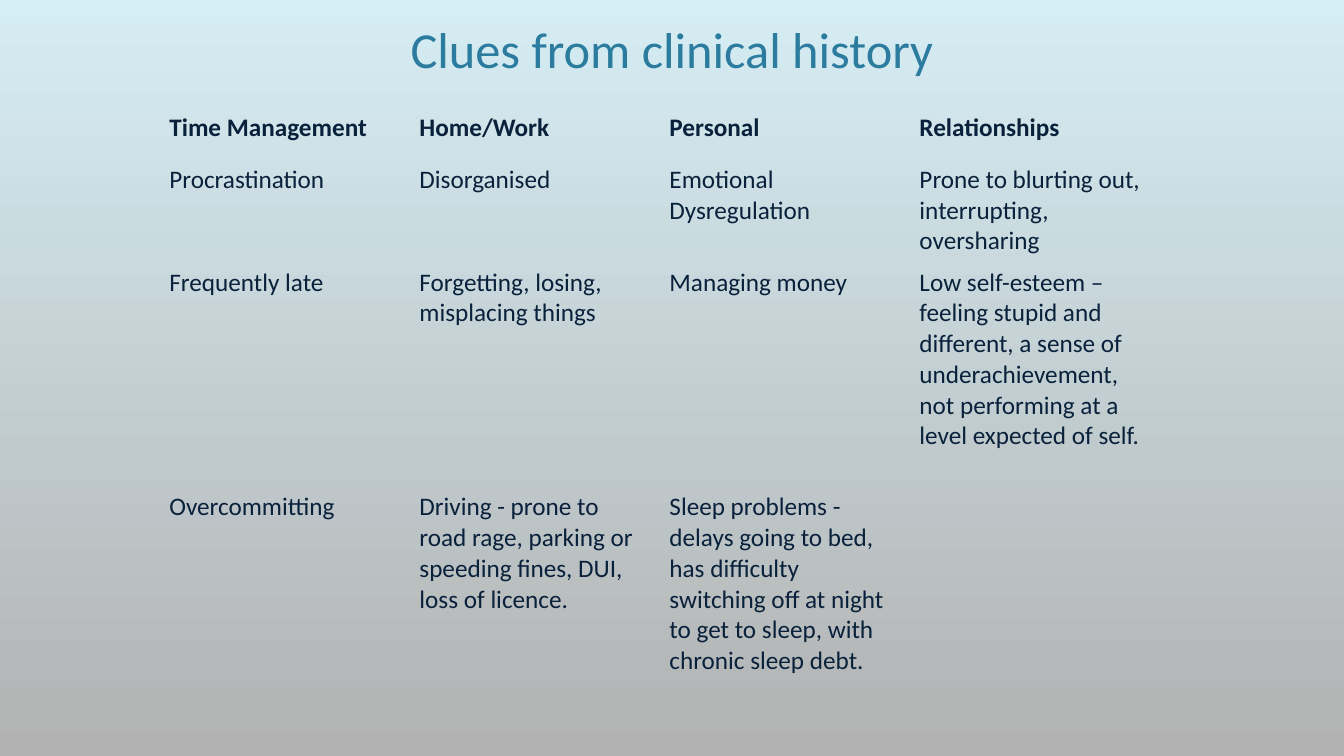
"""Build the slide 'Clues from clinical history' with its table of signs."""
import pptx
import pptx.util
import pptx.dml.color
import pptx.enum.text
import pptx.oxml.ns

Inches = pptx.util.Inches
Pt = pptx.util.Pt
RGBColor = pptx.dml.color.RGBColor

SKY = RGBColor(0xD5, 0xED, 0xF4)
GREY = RGBColor(0xB2, 0xB2, 0xB2)
TEAL = RGBColor(0x2C, 0x7C, 0x9F)
NAVY = RGBColor(0x09, 0x21, 0x3B)
FONT = "Calibri"
NO_GRID_STYLE = "{2D5ABB26-0587-4C30-8999-92F81FD0307C}"

COLUMN_WIDTH = 2.48
ROW_HEIGHTS = [0.51, 1.02, 2.23, 1.93]
CLUES = [
    ["Time Management", "Home/Work", "Personal", "Relationships"],
    ["Procrastination", "Disorganised", "Emotional Dysregulation",
     "Prone to blurting out, interrupting, oversharing"],
    ["Frequently late", "Forgetting, losing, misplacing things", "Managing money",
     "Low self-esteem – feeling stupid and different, a sense of "
     "underachievement, not performing at a level expected of self."],
    ["Overcommitting",
     "Driving - prone to road rage, parking or speeding fines, DUI, loss of licence.",
     "Sleep problems - delays going to bed, has difficulty switching off at night "
     "to get to sleep, with chronic sleep debt.", ""],
]


def style_font(font, size, color, bold=False):
    font.name = FONT
    font.size = Pt(size)
    font.color.rgb = color
    font.bold = bold


prs = pptx.Presentation()
prs.slide_width = Inches(13.33)
prs.slide_height = Inches(7.5)
s = prs.slides.add_slide(prs.slide_layouts[5])

fill = s.background.fill
fill.gradient()
fill.gradient_angle = 270
for stop, color in zip(fill.gradient_stops, [SKY, GREY]):
    stop.color.rgb = color

title = s.shapes.title
title.left, title.top = Inches(0.8), Inches(0.12)
title.width, title.height = Inches(11.73), Inches(0.71)
tf = title.text_frame
tf.text = "Clues from clinical history"
tf.vertical_anchor = pptx.enum.text.MSO_ANCHOR.BOTTOM
p = tf.paragraphs[0]
p.alignment = pptx.enum.text.PP_ALIGN.CENTER
style_font(p.runs[0].font, 36, TEAL)

frame = s.shapes.add_table(
    len(CLUES), len(CLUES[0]), Inches(1.58), Inches(1.07),
    Inches(COLUMN_WIDTH * len(CLUES[0])), Inches(sum(ROW_HEIGHTS)))
table = frame.table
table.horz_banding = False
style_id = table._tbl.tblPr.find(pptx.oxml.ns.qn("a:tableStyleId"))
style_id.text = NO_GRID_STYLE

for column in table.columns:
    column.width = Inches(COLUMN_WIDTH)
for i, (row, height, texts) in enumerate(zip(table.rows, ROW_HEIGHTS, CLUES)):
    row.height = Inches(height)
    for cell, text in zip(row.cells, texts):
        cell.fill.background()
        cell.text_frame.text = text
        for r in cell.text_frame.paragraphs[0].runs:
            style_font(r.font, 18, NAVY, bold=i == 0)

prs.save("out.pptx")
